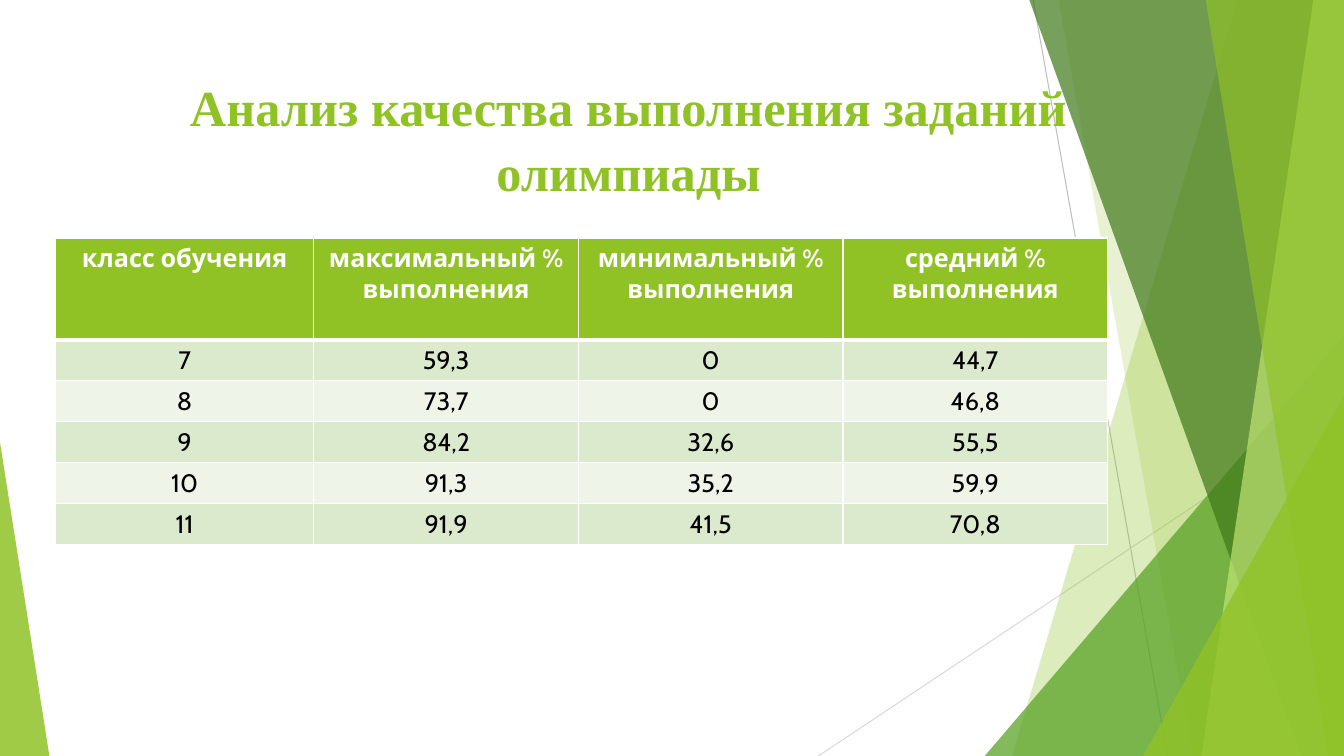
"""Build the slide with the analysis of olympiad task results."""
from dataclasses import dataclass

from lxml import etree
from pptx import Presentation
from pptx.dml.color import RGBColor
from pptx.enum.shapes import MSO_CONNECTOR, MSO_SHAPE
from pptx.enum.text import MSO_ANCHOR, PP_ALIGN
from pptx.oxml.ns import qn
from pptx.util import Pt

STRAIGHT = MSO_CONNECTOR.STRAIGHT
TRIANGLE = MSO_SHAPE.ISOSCELES_TRIANGLE
TOP = MSO_ANCHOR.TOP
CENTER = PP_ALIGN.CENTER

GREEN = RGBColor(0x90, 0xC2, 0x26)
MID_GREEN = RGBColor(0x54, 0xA0, 0x21)
DARK_GREEN = RGBColor(0x3F, 0x78, 0x19)
LIME = RGBColor(0xC0, 0xE4, 0x74)
BAND_DARK = RGBColor(0xDB, 0xE9, 0xCD)
BAND_LIGHT = RGBColor(0xEE, 0xF4, 0xE8)
GRAY = RGBColor(0xBF, 0xBF, 0xBF)
LIGHT_GRAY = RGBColor(0xD9, 0xD9, 0xD9)
WHITE = RGBColor(0xFF, 0xFF, 0xFF)
BLACK = RGBColor(0x00, 0x00, 0x00)

WIDTH, HEIGHT = 960, 540
BLADE_TOP = -0.6
HEADER_HEIGHT, ROW_HEIGHT = 72.8, 29.3
COLUMN_WIDTHS = (184.6, 189, 189, 189)
TABLE_LEFT, TABLE_TOP = 39.6, 170

RESULTS = (
    ("класс обучения", "максимальный % выполнения",
     "минимальный % выполнения", "средний % выполнения"),
    ("7", "59,3", "0", "44,7"),
    ("8", "73,7", "0", "46,8"),
    ("9", "84,2", "32,6", "55,5"),
    ("10", "91,3", "35,2", "59,9"),
    ("11", "91,9", "41,5", "70,8"),
)


@dataclass(frozen=True)
class Ray:
    """A thin straight line."""
    start: tuple[float, float]
    end: tuple[float, float]
    color: RGBColor


@dataclass(frozen=True)
class Blade:
    """A full-height facet whose slanted left edge meets the right slide edge."""
    top_x: float
    bottom_x: float
    color: RGBColor
    opacity: int


@dataclass(frozen=True)
class Corner:
    """A right triangle standing on the bottom slide edge."""
    left: float
    top: float
    width: float
    apex: float
    color: RGBColor
    opacity: int


DECORATION = (
    Ray((738, 0), (834, HEIGHT), GRAY),
    Ray((WIDTH, 290), (584.6, HEIGHT), LIGHT_GRAY),
    Blade(884.2, 722.9, GREEN, 30),
    Blade(756, 851.8, GREEN, 20),
    Corner(703.4, 239.8, 256.6, 1, MID_GREEN, 72),
    Blade(735.1, 929.5, DARK_GREEN, 70),
    Blade(938.2, 858.2, LIME, 70),
    Blade(861.1, 949, GREEN, 65),
    Corner(816.5, 283, 143.5, 1, GREEN, 80),
    Corner(0, 316, 35.3, 0, GREEN, 85),
)


def paint(shape, color: RGBColor, opacity: int) -> None:
    """Give a shape a translucent fill without line or shadow."""
    shape.shadow.inherit = False
    shape.line.fill.background()
    shape.fill.solid()
    shape.fill.fore_color.rgb = color
    color_element = shape.fill._xPr.find(".//" + qn("a:srgbClr"))
    etree.SubElement(color_element, qn("a:alpha"), val=str(opacity * 1000))


def draw_ray(slide, ray: Ray) -> None:
    """Draw a thin line."""
    points = [Pt(value) for value in (*ray.start, *ray.end)]
    connector = slide.shapes.add_connector(STRAIGHT, *points)
    connector.line.color.rgb = ray.color
    connector.line.width = Pt(0.75)
    etree.SubElement(connector._element.spPr, qn("a:effectLst"))


def draw_blade(slide, blade: Blade) -> None:
    """Draw a full-height facet."""
    builder = slide.shapes.build_freeform(Pt(blade.top_x), Pt(BLADE_TOP))
    corners = ((WIDTH, BLADE_TOP), (WIDTH, HEIGHT), (blade.bottom_x, HEIGHT))
    builder.add_line_segments([(Pt(x), Pt(y)) for x, y in corners], close=True)
    paint(builder.convert_to_shape(), blade.color, blade.opacity)


def draw_corner(slide, corner: Corner) -> None:
    """Draw a right triangle."""
    shape = slide.shapes.add_shape(
        TRIANGLE, Pt(corner.left), Pt(corner.top),
        Pt(corner.width), Pt(HEIGHT - corner.top))
    shape.adjustments[0] = corner.apex
    paint(shape, corner.color, corner.opacity)


def write(paragraph, text: str, font: str, size: float,
          color: RGBColor, bold: bool) -> None:
    """Add one centred run to a paragraph."""
    paragraph.alignment = CENTER
    run = paragraph.add_run()
    run.text = text
    run.font.name = font
    run.font.size = Pt(size)
    run.font.color.rgb = color
    run.font.bold = bold


def draw_title(slide) -> None:
    """Draw the slide title."""
    shape = slide.shapes.add_textbox(Pt(53.3), Pt(48), Pt(791.3), Pt(96))
    frame = shape.text_frame
    frame.word_wrap = True
    frame.vertical_anchor = TOP
    paragraph = frame.paragraphs[0]
    paragraph.line_spacing = 1.07
    write(paragraph, "Анализ качества выполнения заданий олимпиады",
          "Times New Roman", 36, GREEN, True)


def add_border(cell, side: str, width: float) -> None:
    """Add a white border to one side of a cell."""
    properties = cell._tc.get_or_add_tcPr()
    line = etree.SubElement(properties, qn(f"a:ln{side}"), w=str(Pt(width)))
    fill = etree.SubElement(line, qn("a:solidFill"))
    etree.SubElement(fill, qn("a:srgbClr"), val=str(WHITE))


def draw_table(slide) -> None:
    """Draw the results table."""
    height = HEADER_HEIGHT + ROW_HEIGHT * (len(RESULTS) - 1)
    table = slide.shapes.add_table(
        len(RESULTS), len(COLUMN_WIDTHS), Pt(TABLE_LEFT), Pt(TABLE_TOP),
        Pt(sum(COLUMN_WIDTHS)), Pt(height)).table
    for column, width in zip(table.columns, COLUMN_WIDTHS):
        column.width = Pt(width)
    for row_index, texts in enumerate(RESULTS):
        header = row_index == 0
        table.rows[row_index].height = Pt(HEADER_HEIGHT if header else ROW_HEIGHT)
        band = BAND_DARK if row_index % 2 else BAND_LIGHT
        borders = {"L": 1, "R": 1, "T": 3 if row_index == 1 else 1,
                   "B": 3 if header else 1}
        for column_index, text in enumerate(texts):
            cell = table.cell(row_index, column_index)
            for side, width in borders.items():
                add_border(cell, side, width)
            cell.fill.solid()
            cell.fill.fore_color.rgb = GREEN if header else band
            write(cell.text_frame.paragraphs[0], text, "Cabin", 18,
                  WHITE if header else BLACK, header)


def main() -> None:
    """Build and save the presentation."""
    presentation = Presentation()
    presentation.slide_width = Pt(WIDTH)
    presentation.slide_height = Pt(HEIGHT)
    slide = presentation.slides.add_slide(presentation.slide_layouts[6])
    painters = {Ray: draw_ray, Blade: draw_blade, Corner: draw_corner}
    for item in DECORATION:
        painters[type(item)](slide, item)
    draw_title(slide)
    draw_table(slide)
    presentation.save("out.pptx")


if __name__ == "__main__":
    main()
